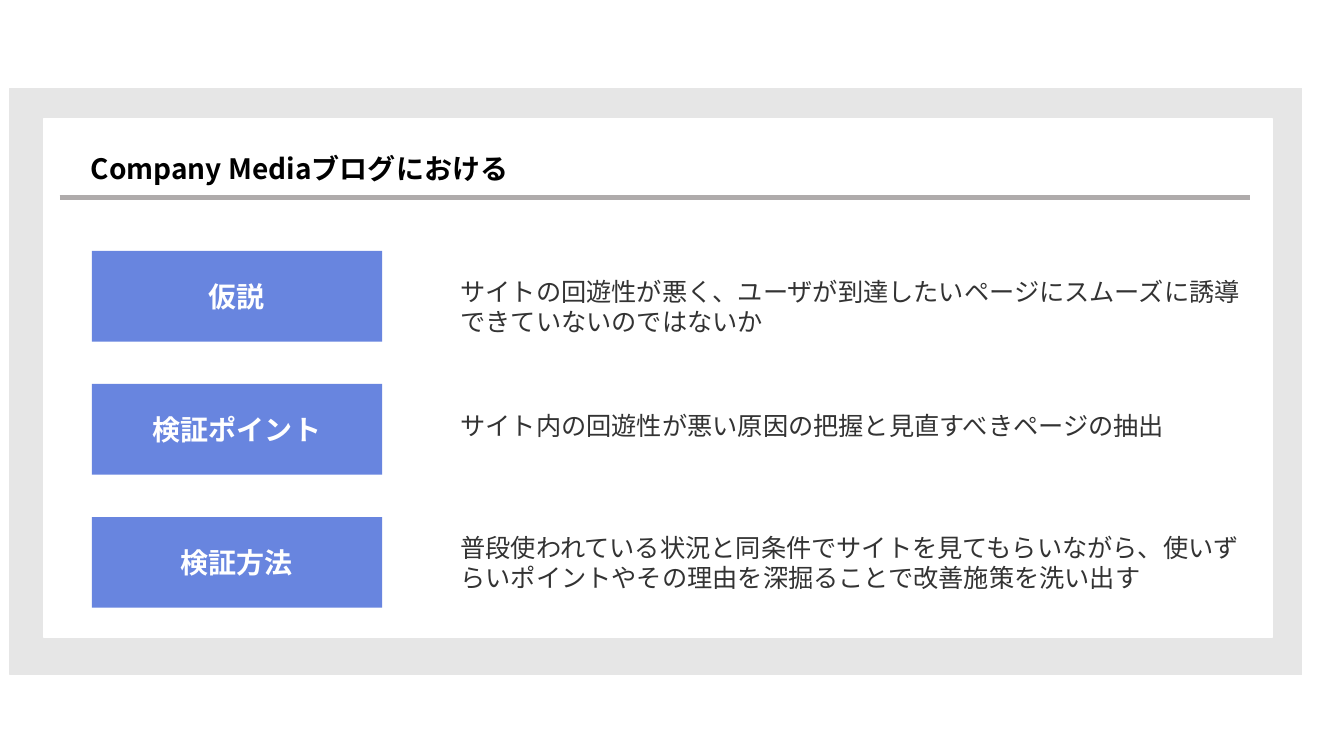
from dataclasses import dataclass

from lxml.etree import SubElement
from pptx import Presentation
from pptx.dml.color import RGBColor
from pptx.enum.lang import MSO_LANGUAGE_ID as Language
from pptx.enum.shapes import MSO_CONNECTOR as Connector, MSO_SHAPE as Shape
from pptx.enum.text import MSO_ANCHOR as Anchor, MSO_AUTO_SIZE as AutoSize, PP_ALIGN as Align
from pptx.oxml.ns import qn
from pptx.slide import Slide
from pptx.text.text import TextFrame
from pptx.util import Inches, Pt

FONT = "Noto Sans CJK JP"
FRAME_GREY = RGBColor(0xE6, 0xE6, 0xE6)
RULE_GREY = RGBColor(0xAF, 0xAB, 0xAB)
LABEL_BLUE = RGBColor(0x68, 0x85, 0xDF)
TEXT_GREY = RGBColor(0x33, 0x33, 0x33)
BLACK = RGBColor(0x00, 0x00, 0x00)
WHITE = RGBColor(0xFF, 0xFF, 0xFF)

# The page is a grid of 100 columns by 100 rows
PAGE_WIDTH, PAGE_HEIGHT = Inches(13.33), Inches(7.5)


@dataclass(frozen=True)
class Area:
    left: float
    top: float
    width: float
    height: float

    def lengths(self) -> tuple[int, int, int, int]:
        return (column(self.left), row(self.top), column(self.width), row(self.height))


@dataclass(frozen=True)
class Topic:
    label: str
    detail: str
    detail_top: float
    detail_height: float


ONE_LINE, TWO_LINES = 5.33, 9.47
LABEL_TOP, LABEL_STEP = 33.2, 17.6
TOPICS = [
    Topic("仮説", "サイトの回遊性が悪く、ユーザが到達したいページにスムーズに誘導できていないのではないか",
          35.87, TWO_LINES),
    Topic("検証ポイント", "サイト内の回遊性が悪い原因の把握と見直すべきページの抽出",
          53.6, ONE_LINE),
    Topic("検証方法", "普段使われている状況と同条件でサイトを見てもらいながら、使いずらいポイントやその理由を深掘ることで改善施策を洗い出す",
          69.73, TWO_LINES),
]


def column(count: float) -> int:
    return round(PAGE_WIDTH * count / 100)


def row(count: float) -> int:
    return round(PAGE_HEIGHT * count / 100)


def write(frame: TextFrame, text: str, size: int, color: RGBColor,
          bold: bool = False, align: Align = Align.LEFT, anchor: Anchor = Anchor.TOP) -> None:
    frame.word_wrap = True
    frame.vertical_anchor = anchor
    para = frame.paragraphs[0]
    para.alignment = align
    span = para.add_run()
    span.text = text
    font = span.font
    font.name, font.size, font.bold = FONT, Pt(size), bold
    font.color.rgb = color
    font.language_id = Language.JAPANESE
    # East Asian characters take their own typeface
    east_asian = SubElement(font._element, qn("a:ea"))
    east_asian.set("typeface", FONT)


def add_box(page: Slide, area: Area, fill: RGBColor, outlined: bool = False) -> TextFrame:
    box = page.shapes.add_shape(Shape.RECTANGLE, *area.lengths())
    box.shadow.inherit = False
    box.fill.solid()
    box.fill.fore_color.rgb = fill
    if outlined:
        box.line.color.rgb = fill
        box.line.width = Pt(1)
    else:
        box.line.fill.background()
    return box.text_frame


def add_title(page: Slide, text: str, area: Area) -> None:
    title = page.shapes.title
    title.left, title.top, title.width, title.height = area.lengths()
    write(title.text_frame, text, 20, BLACK, bold=True)
    title.text_frame.auto_size = AutoSize.SHAPE_TO_FIT_TEXT
    # Bring the title in front of the panels
    title.element.getparent().append(title.element)


def add_rule(page: Slide, left: float, right: float, top: float) -> None:
    rule = page.shapes.add_connector(
        Connector.STRAIGHT, column(left), row(top), column(right), row(top))
    rule.line.color.rgb = RULE_GREY
    rule.line.width = Pt(3)
    SubElement(rule._element.spPr, qn("a:effectLst"))


def add_topic(page: Slide, topic: Topic, label_top: float) -> None:
    label = add_box(page, Area(6.83, label_top, 21.6, 12), LABEL_BLUE)
    write(label, topic.label, 20, WHITE, bold=True, align=Align.CENTER, anchor=Anchor.MIDDLE)
    area = Area(33.53, topic.detail_top, 59.49, topic.detail_height)
    detail = page.shapes.add_textbox(*area.lengths()).text_frame
    write(detail, topic.detail, 18, TEXT_GREY)
    detail.auto_size = AutoSize.SHAPE_TO_FIT_TEXT


def main() -> None:
    deck = Presentation()
    deck.slide_width, deck.slide_height = PAGE_WIDTH, PAGE_HEIGHT
    page = deck.slides.add_slide(deck.slide_layouts.get_by_name("Title Only"))

    # Grey frame and white panel
    add_box(page, Area(0.75, 11.73, 96.1, 77.47), FRAME_GREY, outlined=True)
    add_box(page, Area(3.23, 15.73, 91.45, 68.53), WHITE, outlined=True)

    # Heading
    add_title(page, "Company Mediaブログにおける", Area(6, 19.33, 44.04, 5.87))
    add_rule(page, 4.43, 93.02, 26.13)

    # Labels with their explanations
    for index, topic in enumerate(TOPICS):
        add_topic(page, topic, LABEL_TOP + index * LABEL_STEP)

    deck.save("out.pptx")


if __name__ == "__main__":
    main()
